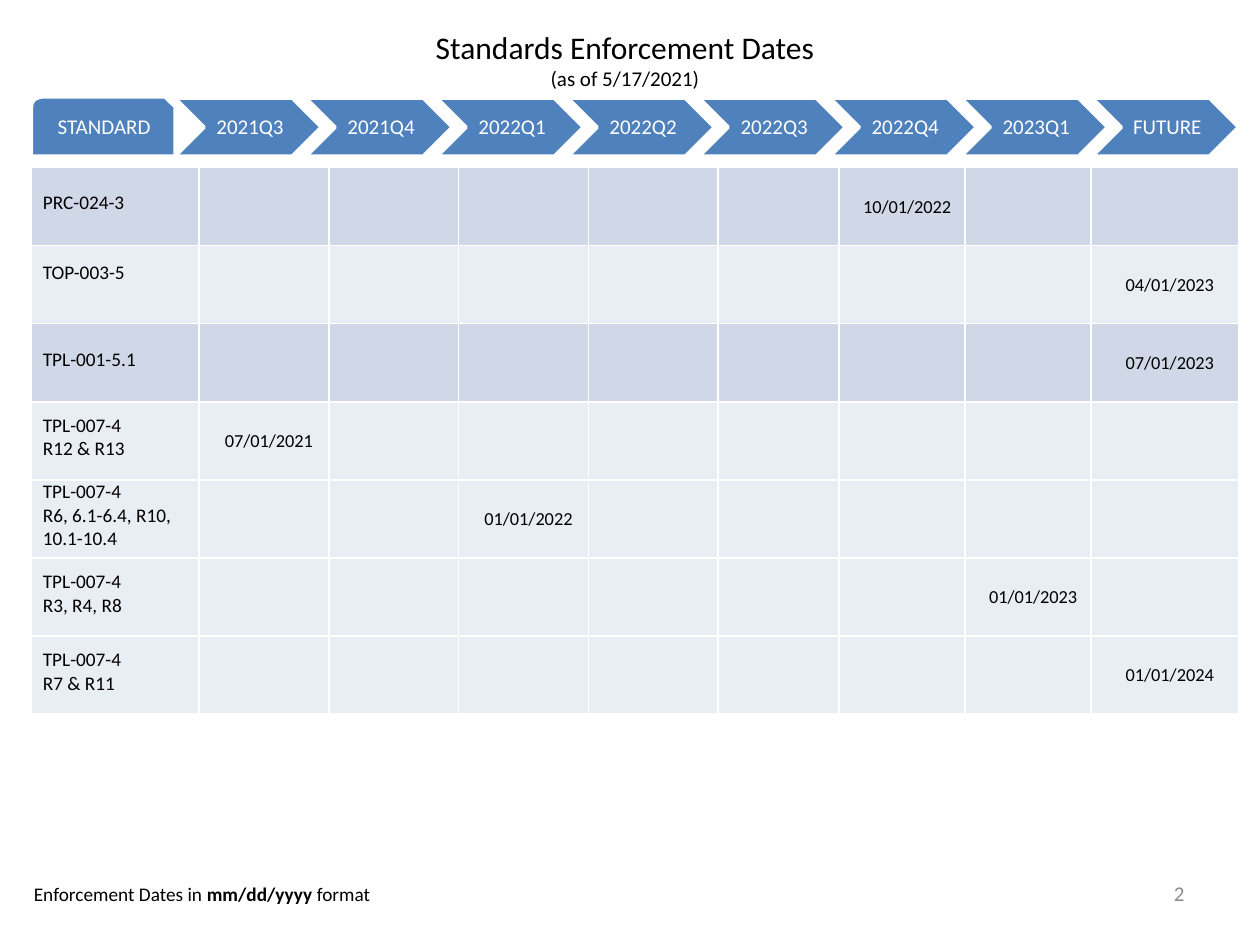
from typing import NamedTuple

from lxml.etree import SubElement
from pptx import Presentation
from pptx.dml.color import RGBColor
from pptx.enum.shapes import MSO_SHAPE as Preset
from pptx.enum.text import MSO_ANCHOR as Anchor, PP_ALIGN as Align
from pptx.oxml.ns import qn
from pptx.util import Inches, Pt

BLACK = RGBColor(0x00, 0x00, 0x00)
WHITE = RGBColor(0xFF, 0xFF, 0xFF)
GRAY = RGBColor(0x8C, 0x8C, 0x8C)
BLUE = RGBColor(0x4F, 0x81, 0xBD)
BAND_DARK = RGBColor(0xD0, 0xD8, 0xE8)
BAND_LIGHT = RGBColor(0xE9, 0xED, 0xF4)


class Standard(NamedTuple):
    lines: list[str]
    column: int
    date: str
    fill: RGBColor = BAND_LIGHT
    bottom: float = 0  # bottom cell margin, lifts the name


PERIODS = ["2021Q3", "2021Q4", "2022Q1", "2022Q2", "2022Q3", "2022Q4", "2023Q1", "FUTURE"]
COLUMN_WIDTHS = [1.33, 1.03, 1.03, 1.03, 1.03, 0.96, 1, 1, 1.17]
ROW_HEIGHT = 0.62
STANDARDS = [
    Standard(["PRC-024-3"], 6, "10/01/2022", BAND_DARK),
    Standard(["TOP-003-5"], 8, "04/01/2023", bottom=0.13),
    Standard(["TPL-001-5.1"], 8, "07/01/2023", BAND_DARK),
    Standard(["TPL-007-4", "R12 & R13"], 1, "07/01/2021"),
    Standard(["TPL-007-4", "R6, 6.1-6.4, R10, 10.1-10.4"], 3, "01/01/2022"),
    Standard(["TPL-007-4", "R3, R4, R8"], 7, "01/01/2023"),
    Standard(["TPL-007-4", "R7 & R11"], 8, "01/01/2024"),
]


def add_text(frame, text: str, *, size: float, color=BLACK, bold=False,
             align=Align.LEFT, spacing=None, new_para=False) -> None:
    """Append a run to the last paragraph, or to a new one."""
    para = frame.add_paragraph() if new_para else frame.paragraphs[-1]
    para.alignment = align
    if spacing is not None:
        para.line_spacing = spacing
    span = para.add_run()
    span.text = text
    font = span.font
    font.name, font.size, font.bold = "Calibri", Pt(size), bold
    font.color.rgb = color


def add_box(page, left: float, top: float, width: float, height: float, anchor=Anchor.TOP):
    box = page.shapes.add_textbox(Inches(left), Inches(top), Inches(width), Inches(height))
    frame = box.text_frame
    frame.word_wrap = True
    frame.vertical_anchor = anchor
    return frame


def add_header(page, preset, text: str, left: float, top: float, width: float, height: float) -> None:
    shape = page.shapes.add_shape(preset, Inches(left), Inches(top), Inches(width), Inches(height))
    shape.shadow.inherit = False
    shape.fill.solid()
    shape.fill.fore_color.rgb = BLUE
    shape.line.color.rgb = WHITE
    shape.line.width = Pt(2)
    frame = shape.text_frame
    frame.word_wrap = False
    frame.vertical_anchor = Anchor.MIDDLE
    frame.margin_left = Inches(0.05)
    frame.margin_top = frame.margin_right = frame.margin_bottom = Inches(0.02)
    add_text(frame, text, size=12, color=WHITE, align=Align.CENTER, spacing=0.9)


def format_cell(cell, fill: RGBColor, bottom: float = 0) -> None:
    properties = cell._tc.get_or_add_tcPr()
    for side in ("lnL", "lnR", "lnT", "lnB"):
        line = SubElement(properties, qn(f"a:{side}"), w=str(Pt(1)))
        solid = SubElement(line, qn("a:solidFill"))
        SubElement(solid, qn("a:srgbClr"), val=str(WHITE))
    cell.fill.solid()
    cell.fill.fore_color.rgb = fill
    cell.vertical_anchor = Anchor.MIDDLE
    cell.margin_left = Inches(0.09)
    cell.margin_top = cell.margin_right = Inches(0.01)
    cell.margin_bottom = Inches(bottom)


def add_schedule(page) -> None:
    table = page.shapes.add_table(
        len(STANDARDS), len(COLUMN_WIDTHS), Inches(0.25), Inches(1.33),
        Inches(sum(COLUMN_WIDTHS)), Inches(ROW_HEIGHT * len(STANDARDS))).table
    table.first_row = table.horz_banding = False
    for column, width in zip(table.columns, COLUMN_WIDTHS):
        column.width = Inches(width)
    for row, standard in zip(table.rows, STANDARDS):
        row.height = Inches(ROW_HEIGHT)
        for index, cell in enumerate(row.cells):
            format_cell(cell, standard.fill, standard.bottom if index == 0 else 0)
        for index, line in enumerate(standard.lines):
            add_text(row.cells[0].text_frame, line, size=11,
                     spacing=None if index else Pt(9), new_para=index > 0)
        add_text(row.cells[standard.column].text_frame, standard.date,
                 size=10.5, align=Align.CENTER)


def main() -> None:
    deck = Presentation()
    deck.slide_width, deck.slide_height = Inches(10), Inches(7.5)
    page = deck.slides.add_slide(deck.slide_layouts[6])

    # Title and page number
    title = add_box(page, 1, 0.17, 7.92, 0.61)
    add_text(title, "Standards Enforcement Dates", size=18, align=Align.CENTER)
    add_text(title, "(as of 5/17/2021)", size=12, align=Align.CENTER, new_para=True)
    number = add_box(page, 7.17, 6.89, 2.33, 0.4, Anchor.MIDDLE)
    add_text(number, "2", size=12, color=GRAY, align=Align.RIGHT)

    # Enforcement dates by standard
    add_schedule(page)

    # Timeline header
    add_header(page, Preset.SNIP_ROUND_RECTANGLE, "STANDARD", 0.25, 0.77, 1.14, 0.47)
    for index, period in enumerate(PERIODS):
        add_header(page, Preset.CHEVRON, period, 1.39 + 1.04 * index, 0.78, 1.16, 0.46)

    # Date format note
    note = add_box(page, 0.17, 6.95, 3.08, 0.29)
    add_text(note, "Enforcement Dates in ", size=11)
    add_text(note, "mm/dd/yyyy", size=11, bold=True)
    add_text(note, " format", size=11)

    deck.save("out.pptx")


if __name__ == "__main__":
    main()
